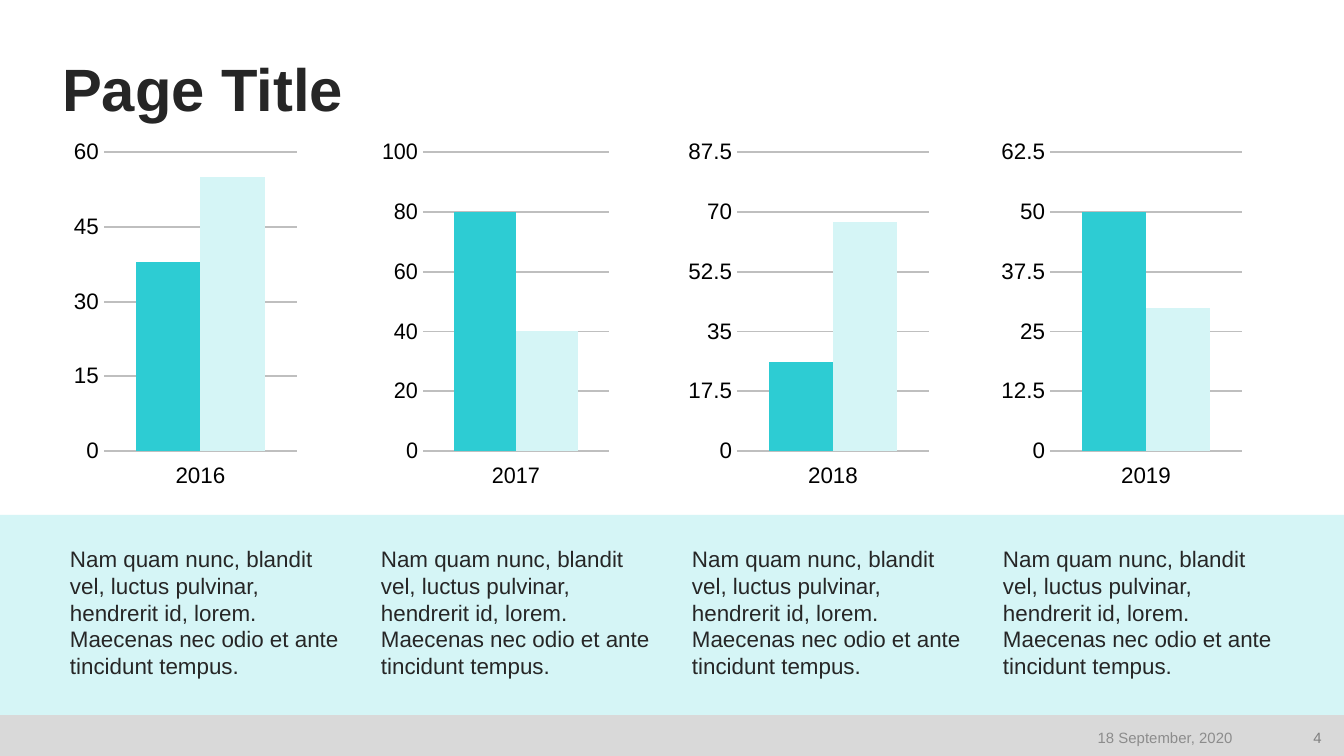
from lxml import etree
from pptx import Presentation
from pptx.chart.data import CategoryChartData
from pptx.dml.color import RGBColor
from pptx.enum.chart import XL_CHART_TYPE as ChartType
from pptx.enum.chart import XL_TICK_LABEL_POSITION as LabelPosition
from pptx.enum.chart import XL_TICK_MARK as TickMark
from pptx.enum.shapes import MSO_SHAPE as Shape
from pptx.enum.text import MSO_ANCHOR as Anchor
from pptx.enum.text import MSO_AUTO_SIZE as AutoSize
from pptx.enum.text import PP_ALIGN as Align
from pptx.oxml.ns import qn
from pptx.util import Emu, Pt

# Content
TITLE = "Page Title"
CAPTION = ("Nam quam nunc, blandit vel, luctus pulvinar, hendrerit id, lorem. "
           "Maecenas nec odio et ante tincidunt tempus.")
DATE = "18 September, 2020"
PAGE_NUMBER = "4"
# year, values, axis step, number of steps, left, width, plot x and width shares
CHARTS = [
    ("2016", (38, 55), 15, 4, 70, 228, 0.15, 0.845),
    ("2017", (80, 40), 20, 5, 382, 228, 0.15, 0.845),
    ("2018", (26, 67), 17.5, 5, 688, 242, 0.204, 0.791),
    ("2019", (50, 30), 12.5, 5, 1001, 242, 0.204, 0.791),
]

# Style
FONT = "Arial"
BLACK = RGBColor(0x00, 0x00, 0x00)
INK = RGBColor(0x26, 0x26, 0x26)
TEAL = RGBColor(0x2D, 0xCC, 0xD3)
PALE_TEAL = RGBColor(0xD5, 0xF5, 0xF6)
FOOTER_GRAY = RGBColor(0xD9, 0xD9, 0xD9)
GRID_GRAY = RGBColor(0xBF, 0xBF, 0xBF)
NUMBER_GRAY = RGBColor(0x80, 0x80, 0x80)
DATE_GRAY = RGBColor(0x8C, 0x8C, 0x8C)

# Geometry in px
PX = 914400 / 134.4
WIDTH, HEIGHT = 1344, 756
CHART_TOP, CHART_HEIGHT = 124, 371
PLOT_TOP, PLOT_HEIGHT = 0.076, 0.806
BAND_TOP, FOOTER_TOP = 515, 715
CAPTION_LEFT, CAPTION_PITCH, CAPTION_WIDTH = 70, 311, 280


def px(*lengths):
    return [Emu(round(length * PX)) for length in lengths]


def style_font(font, size, color, bold=False):
    font.name, font.size, font.bold = FONT, Pt(size), bold
    font.color.rgb = color


def add_bar(slide, top, bottom, color):
    shape = slide.shapes.add_shape(Shape.RECTANGLE, *px(0, top, WIDTH, bottom - top))
    shape.shadow.inherit = False
    shape.fill.solid()
    shape.fill.fore_color.rgb = color
    shape.line.fill.background()


def set_margins(text_frame, margin):
    text_frame.margin_left = text_frame.margin_right = margin
    text_frame.margin_top = text_frame.margin_bottom = margin


def add_text(slide, box, text, size, color):
    text_frame = slide.shapes.add_textbox(*px(*box)).text_frame
    text_frame.word_wrap = True
    text_frame.text = text
    style_font(text_frame.paragraphs[0].runs[0].font, size, color)
    return text_frame


def set_plot_area(chart, x, width):
    plot_area = chart._chartSpace.chart.plotArea
    for old_layout in plot_area.findall(qn("c:layout")):
        plot_area.remove(old_layout)
    layout = etree.Element(qn("c:layout"))
    manual = etree.SubElement(layout, qn("c:manualLayout"))
    settings = [("layoutTarget", "inner"), ("xMode", "edge"), ("yMode", "edge"),
                ("x", x), ("y", PLOT_TOP), ("w", width), ("h", PLOT_HEIGHT)]
    for name, value in settings:
        etree.SubElement(manual, qn(f"c:{name}")).set("val", str(value))
    plot_area.insert(0, layout)


def add_column_chart(slide, year, values, step, steps, left, width, plot_x, plot_width):
    data = CategoryChartData()
    data.categories = [year]
    for number, value in enumerate(values, 1):
        data.add_series(f"Series {number}", [value])
    chart = slide.shapes.add_chart(
        ChartType.COLUMN_CLUSTERED, *px(left, CHART_TOP, width, CHART_HEIGHT), data).chart
    chart.has_title = chart.has_legend = False
    style_font(chart.font, 10, BLACK)
    plot = chart.plots[0]
    plot.vary_by_categories = False
    plot.gap_width, plot.overlap = 100, 0
    for series, color in zip(plot.series, (TEAL, PALE_TEAL)):
        series.format.fill.solid()
        series.format.fill.fore_color.rgb = color

    category_axis, value_axis = chart.category_axis, chart.value_axis
    for axis in (category_axis, value_axis):
        axis.major_tick_mark = axis.minor_tick_mark = TickMark.NONE
        axis.tick_labels.number_format = "General"
        axis.tick_labels.number_format_is_linked = False
        style_font(axis.tick_labels.font, 12, BLACK)
    category_axis.tick_label_position = LabelPosition.LOW
    value_axis.minimum_scale, value_axis.maximum_scale = 0, step * steps
    value_axis.major_unit = step
    value_axis.has_major_gridlines = True
    value_axis.format.line.fill.background()
    for line in (category_axis.format.line, value_axis.major_gridlines.format.line):
        line.width = Pt(1)
        line.color.rgb = GRID_GRAY
    set_plot_area(chart, plot_x, plot_width)


def main():
    presentation = Presentation()
    presentation.slide_width, presentation.slide_height = px(WIDTH, HEIGHT)
    slide = presentation.slides.add_slide(presentation.slide_layouts[5])

    # Footer strip
    add_bar(slide, FOOTER_TOP, HEIGHT, FOOTER_GRAY)

    # Title
    title = slide.shapes.title
    title.left, title.top, title.width, title.height = px(62, 54, 1223, 70)
    text_frame = title.text_frame
    text_frame.text = TITLE
    text_frame.auto_size = AutoSize.NONE
    text_frame.vertical_anchor = Anchor.BOTTOM
    set_margins(text_frame, 0)
    paragraph = text_frame.paragraphs[0]
    paragraph.alignment = Align.LEFT
    paragraph.line_spacing = 0.9
    style_font(paragraph.runs[0].font, 32, INK, bold=True)

    # Charts
    for chart in CHARTS:
        add_column_chart(slide, *chart)

    # Caption band, one caption under each chart
    add_bar(slide, BAND_TOP, FOOTER_TOP, PALE_TEAL)
    for column in range(len(CHARTS)):
        left = CAPTION_LEFT + column * CAPTION_PITCH
        text_frame = add_text(slide, (left, 545, CAPTION_WIDTH, 149), CAPTION, 12, INK)
        set_margins(text_frame, 0)

    # Page number and date
    for left, width, text, color in [(1285, 50, PAGE_NUMBER, NUMBER_GRAY),
                                     (943, 303, DATE, DATE_GRAY)]:
        text_frame = add_text(slide, (left, 720, width, 35), text, 8, color)
        text_frame.vertical_anchor = Anchor.MIDDLE
        text_frame.paragraphs[0].alignment = Align.RIGHT

    presentation.save("out.pptx")


if __name__ == "__main__":
    main()
